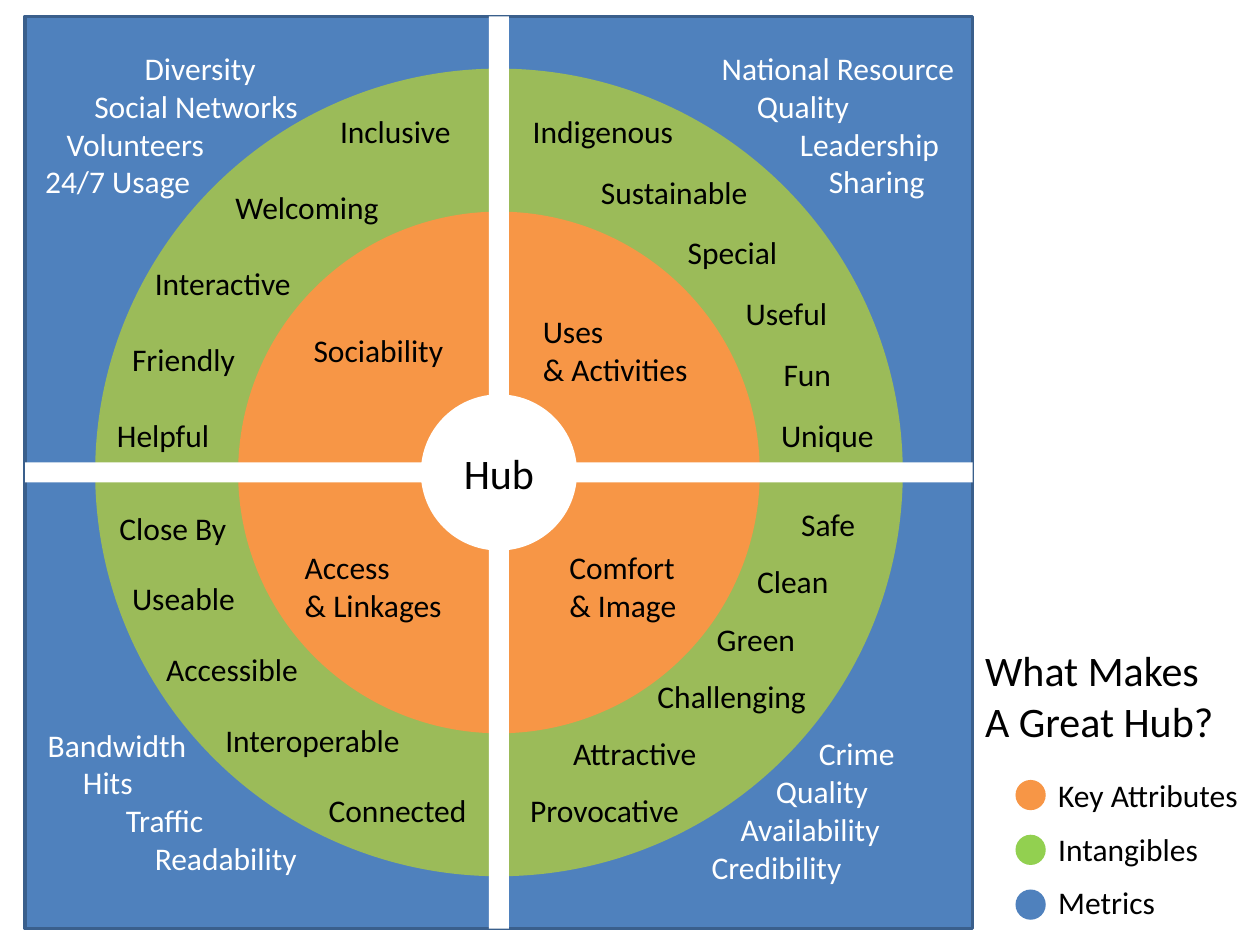
from pptx import Presentation
from pptx import util as u
from pptx.dml.color import RGBColor
from pptx.enum import shapes, text

BLACK = RGBColor(0x00, 0x00, 0x00)
WHITE = RGBColor(0xFF, 0xFF, 0xFF)
BLUE = RGBColor(0x4F, 0x81, 0xBD)
NAVY = RGBColor(0x3A, 0x5F, 0x8C)
OLIVE = RGBColor(0x9B, 0xBB, 0x59)
LIME = RGBColor(0x92, 0xD0, 0x50)
ORANGE = RGBColor(0xF7, 0x96, 0x46)

RECT = shapes.MSO_SHAPE.RECTANGLE
OVAL = shapes.MSO_SHAPE.OVAL
DONUT = shapes.MSO_SHAPE.DONUT

SERVICE = "Hub"


class Board:
    """The slide and its style."""
    font = "Calibri"
    size = 18
    cx, cy = 3.96, 3.75  # centre of the wheel

    def __init__(self, slide):
        self.s = slide

    def shape(self, kind, x, y, w, h, fill, line=None, adj=None):
        sp = self.s.shapes.add_shape(
            kind, u.Inches(x), u.Inches(y), u.Inches(w), u.Inches(h))
        sp.shadow.inherit = False
        sp.fill.solid()
        sp.fill.fore_color.rgb = fill
        if line:
            sp.line.color.rgb = line
            sp.line.width = u.Pt(2)
        else:
            sp.line.fill.background()
        if adj is not None:
            sp.adjustments[0] = adj
        return sp

    def centred(self, kind, w, h, fill, **style):
        return self.shape(kind, self.cx - w / 2, self.cy - h / 2, w, h, fill, **style)

    def style(self, p, color, size):
        p.font.name = self.font
        p.font.size = u.Pt(size)
        p.font.color.rgb = color

    def label(self, x, y, w, *lines, color=BLACK, size=None, indents=None, wrap=False):
        size = size or self.size
        h = 0.1 + len(lines) * size / 60
        box = self.s.shapes.add_textbox(
            u.Inches(x), u.Inches(y), u.Inches(w), u.Inches(h))
        tf = box.text_frame
        tf.word_wrap = wrap or indents is not None
        for i, line in enumerate(lines):
            p = tf.paragraphs[0] if i == 0 else tf.add_paragraph()
            p.text = line
            self.style(p, color, size)
            if indents:
                p._p.get_or_add_pPr().set("marL", str(u.Inches(indents[i])))

    def arc(self, top, bottom, words):
        """Words at even heights, each with its own left edge and width."""
        step = (bottom - top) / (len(words) - 1)
        for i, (word, x, w) in enumerate(words):
            self.label(x, top + i * step, w, word)


prs = Presentation()
prs.slide_width, prs.slide_height = u.Inches(10), u.Inches(7.5)
b = Board(prs.slides.add_slide(prs.slide_layouts[6]))

# Title and legend
b.label(7.72, 5.07, 2.22, "What Makes", f"A Great {SERVICE}?", size=24, wrap=True)
legend = [("Key Attributes", 1.65, ORANGE), ("Intangibles", 1.32, LIME),
          ("Metrics", 0.98, BLUE)]
for i, (name, w, color) in enumerate(legend):
    b.shape(OVAL, 8.06, 6.19 + i * 0.435, 0.24, 0.24, color)
    b.label(8.3, 6.11 + i * 0.425, w, name)

# Wheel with its cross and hub
b.centred(RECT, 7.52, 7.24, BLUE, line=NAVY)
b.centred(DONUT, 6.41, 6.41, OLIVE, adj=0.179)
b.centred(DONUT, 4.14, 4.14, ORANGE, adj=0.404)
b.centred(RECT, 7.52, 0.16, WHITE)
b.centred(RECT, 0.16, 7.24, WHITE)
hub = b.centred(OVAL, 1.24, 1.24, WHITE)
tf = hub.text_frame
tf.margin_left = tf.margin_right = 0
tf.vertical_anchor = text.MSO_ANCHOR.MIDDLE
p = tf.paragraphs[0]
p.text = SERVICE
p.alignment = text.PP_ALIGN.CENTER
b.style(p, BLACK, 24)

# Key attributes
b.label(2.39, 2.58, 1.24, "Sociability")
b.label(4.21, 2.43, 1.36, "Uses", "& Activities")
b.label(2.32, 4.3, 1.3, "Access", "& Linkages")
b.label(4.42, 4.3, 1.1, "Comfort", "& Image")

# Intangibles, one arc per quadrant
b.arc(0.84, 3.25, [("Inclusive", 2.6, 1.09), ("Welcoming", 1.77, 1.35),
                   ("Interactive", 1.13, 1.28), ("Friendly", 0.95, 1.03),
                   ("Helpful", 0.83, 0.94)])
b.arc(0.84, 3.25, [("Indigenous", 4.13, 1.33), ("Sustainable", 4.67, 1.38),
                   ("Special", 5.36, 0.92), ("Useful", 5.82, 0.85),
                   ("Fun", 6.12, 0.58), ("Unique", 6.1, 0.95)])
b.arc(3.99, 6.23, [("Close By", 0.85, 1.06), ("Useable", 0.95, 1.03),
                   ("Accessible", 1.22, 1.26), ("Interoperable", 1.69, 1.6),
                   ("Connected", 2.51, 1.31)])
b.arc(3.96, 6.23, [("Safe", 6.26, 0.63), ("Clean", 5.91, 0.78),
                   ("Green", 5.59, 0.83), ("Challenging", 5.12, 1.4),
                   ("Attractive", 4.45, 1.2), ("Provocative", 4.11, 1.4)])

# Metrics, stepped along the corners
outward = (0, 0.28, 0.62, 0.85)
b.label(0.2, 0.34, 2.3, "Diversity", "Social Networks", "Volunteers", "24/7 Usage",
        color=WHITE, indents=(0.85, 0.45, 0.23, 0.06))
b.label(5.63, 0.34, 2.07, "National Resource", "Quality", "Leadership", "Sharing",
        color=WHITE, indents=outward)
b.label(0.28, 5.71, 2.21, "Bandwidth", "Hits", "Traffic", "Readability",
        color=WHITE, indents=outward)
b.label(5.55, 5.78, 2.47, "Crime", "Quality", "Availability", "Credibility",
        color=WHITE, indents=(0.85, 0.51, 0.23, 0))

prs.save("out.pptx")
